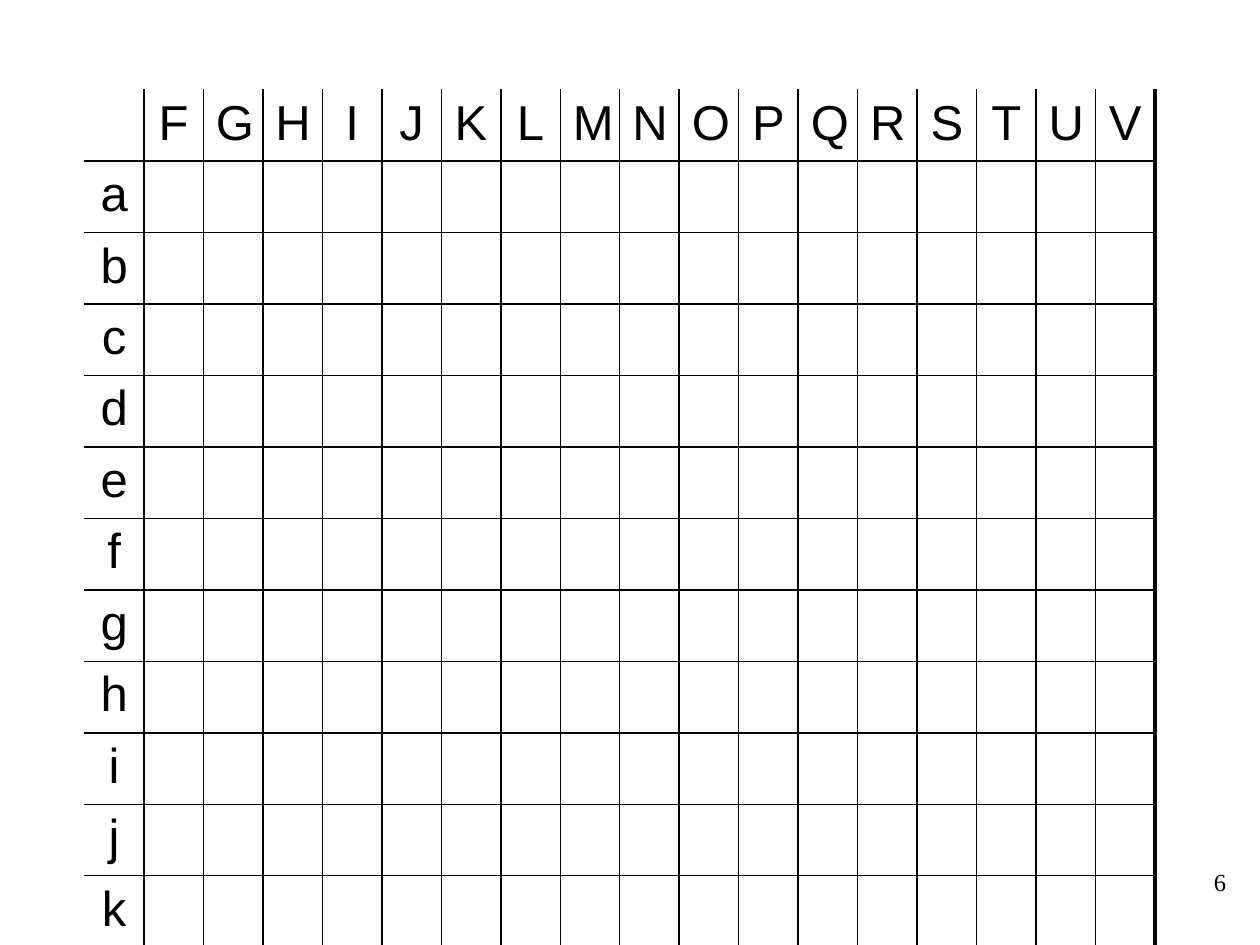
"""Build a slide with an empty letter grid, lettered along its top and left side."""
from dataclasses import dataclass

from lxml.etree import SubElement
from pptx import Presentation
from pptx.dml.color import RGBColor
from pptx.enum.text import PP_ALIGN
from pptx.oxml import parse_xml
from pptx.oxml.ns import nsdecls, qn
from pptx.slide import Slide
from pptx.table import _Cell
from pptx.text.text import TextFrame
from pptx.util import Inches, Pt

BLACK = RGBColor(0, 0, 0)
COLUMN_LETTERS = "FGHIJKLMNOPQRSTUV"
ROW_LETTERS = "abcdefghijk"
THIN, THICK = 1, 2.25


@dataclass(frozen=True)
class Box:
    """A rectangle in inches."""

    left: float
    top: float
    width: float
    height: float

    def lengths(self) -> tuple:
        return tuple(Inches(side) for side in (self.left, self.top, self.width, self.height))


GRID = Box(0.67, 0.71, 8.5, 6.8)
PAGE_NUMBER = Box(7.75, 6.83, 2.08, 0.5)


def write(frame: TextFrame, text: str, *, font: str, size: float,
          align: PP_ALIGN, before_percent: int = 0) -> None:
    """Write one formatted paragraph into a text frame."""
    frame.word_wrap = True
    paragraph = frame.paragraphs[0]
    paragraph.alignment = align
    if before_percent:
        spacing = SubElement(paragraph._p.get_or_add_pPr(), qn("a:spcBef"))
        SubElement(spacing, qn("a:spcPct")).set("val", str(before_percent * 1000))
    run = paragraph.add_run()
    run.text = text
    run.font.name = font
    run.font.size = Pt(size)
    run.font.color.rgb = BLACK


def set_borders(cell: _Cell, **widths: float) -> None:
    """Give each side of a cell a solid line in points, or none for zero."""
    properties = cell._tc.get_or_add_tcPr()
    for side, points in widths.items():
        paint = f'<a:solidFill><a:srgbClr val="{BLACK}"/></a:solidFill>' if points else "<a:noFill/>"
        properties.append(parse_xml(
            f'<a:ln{side} {nsdecls("a")} w="{Pt(points)}">{paint}</a:ln{side}>'))


def add_letter_grid(slide: Slide, box: Box) -> None:
    """Add the grid, open at its top and left, with a thick right and bottom edge."""
    rows, columns = len(ROW_LETTERS) + 1, len(COLUMN_LETTERS) + 1
    table = slide.shapes.add_table(rows, columns, *box.lengths()).table
    table.first_row = table.horz_banding = False
    for column in table.columns:
        column.width = Inches(box.width / columns)
    for row in table.rows:
        row.height = Inches(box.height / rows)
    for r in range(rows):
        for c in range(columns):
            cell = table.cell(r, c)
            set_borders(cell, L=THIN if c else 0, R=THICK if c == columns - 1 else THIN,
                        T=THIN if r else 0, B=THICK if r == rows - 1 else THIN)
            cell.fill.background()
    headings = [(0, c, letter) for c, letter in enumerate(COLUMN_LETTERS, 1)]
    headings += [(r, 0, letter) for r, letter in enumerate(ROW_LETTERS, 1)]
    for r, c, letter in headings:
        write(table.cell(r, c).text_frame, letter, font="Arial", size=28,
              align=PP_ALIGN.CENTER, before_percent=20)


def main() -> None:
    """Build and save the slide."""
    deck = Presentation()
    deck.slide_width, deck.slide_height = Inches(10), Inches(7.5)
    slide = deck.slides.add_slide(deck.slide_layouts[6])
    page_number = slide.shapes.add_textbox(*PAGE_NUMBER.lengths())
    write(page_number.text_frame, "6", font="Times New Roman", size=14, align=PP_ALIGN.RIGHT)
    add_letter_grid(slide, GRID)
    deck.save("out.pptx")


if __name__ == "__main__":
    main()
